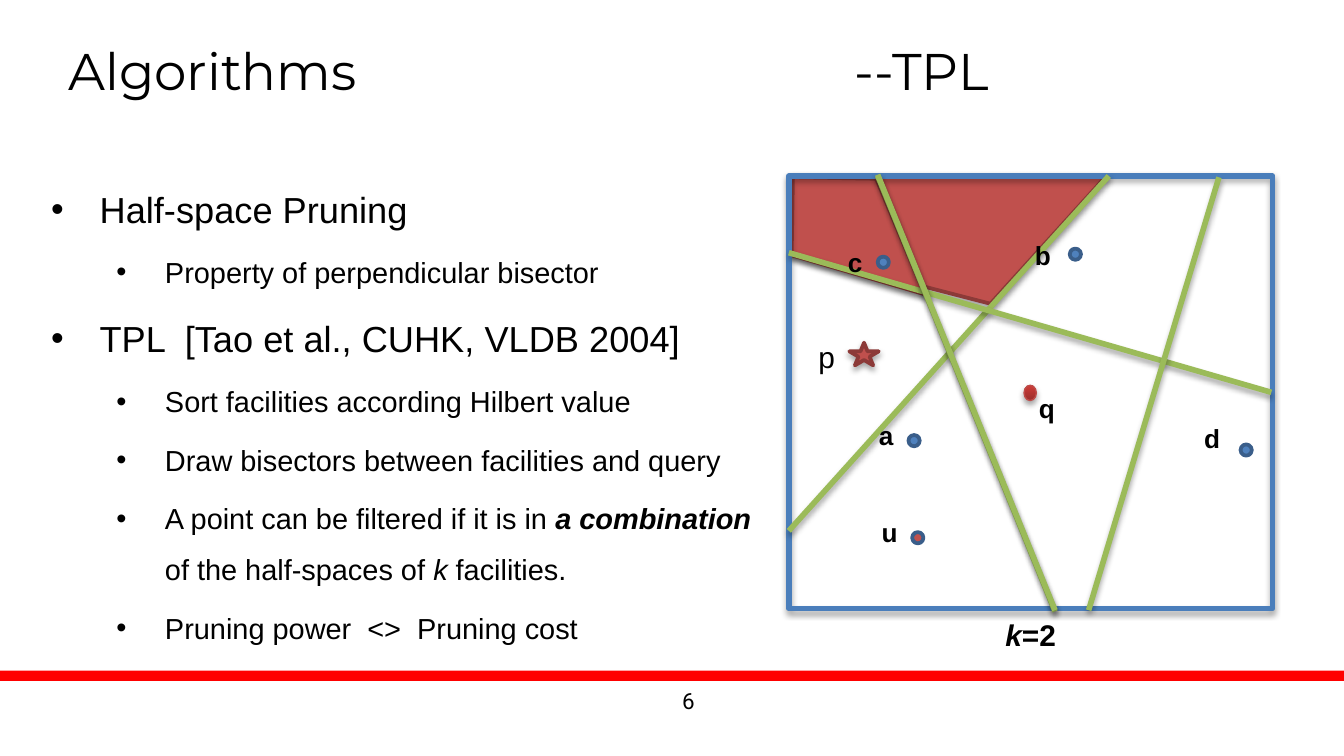
from typing import NamedTuple

from lxml.etree import SubElement
from pptx import Presentation
from pptx.dml.color import RGBColor
from pptx.enum.shapes import MSO_CONNECTOR, MSO_SHAPE
from pptx.enum.text import MSO_ANCHOR, PP_ALIGN
from pptx.oxml.ns import qn
from pptx.util import Pt

COLORS = {
    "text": "000000", "bar": "FF0000", "red": "C0504D", "dark_red": "8C3A38",
    "frame": "4A7EBB", "blue": "4F81BD", "dark_blue": "3A5E8A", "green": "9BBB59",
    "query_line": "BE4B48", "query_low": "9A2F2C", "query_high": "CE3B37",
}
DOT_SIZE = 6
LABEL_SIZE = (28, 24.5)


class Run(NamedTuple):
    text: str
    bold: bool = False
    italic: bool = False


class Item(NamedTuple):
    level: int
    runs: list[Run]


class Site(NamedTuple):
    name: str
    dot: tuple[float, float]
    label: tuple[float, float]
    fill: str = "blue"
    inset: float = 3.6


class Bisector(NamedTuple):
    start: tuple[float, float]
    end: tuple[float, float]


ITEMS = [
    Item(0, [Run("Half-space Pruning")]),
    Item(1, [Run("Property of perpendicular bisector")]),
    Item(0, [Run("TPL  [Tao et al., CUHK, VLDB 2004]")]),
    Item(1, [Run("Sort facilities according Hilbert value")]),
    Item(1, [Run("Draw bisectors between facilities and query")]),
    Item(1, [Run("A point can be filtered if it is in "),
             Run("a combination", bold=True, italic=True),
             Run(" of the half-spaces of "), Run("k", italic=True),
             Run(" facilities.")]),
    Item(1, [Run("Pruning power  <>  Pruning cost")]),
]
PRUNED_REGIONS = [
    [(423.4, 94.3), (592.6, 94.3), (530.6, 162.7), (424.8, 135.4)],
    [(424.8, 95), (469.4, 95.8), (495.4, 157.7), (424.1, 136.8)],
]
BISECTORS = [
    Bisector((422.6, 284.4), (594, 94.3)),
    Bisector((422.6, 135.4), (681.1, 210.2)),
    Bisector((565.2, 327.6), (470.2, 94.3)),
    Bisector((583.2, 326.9), (653, 95)),
    Bisector((565.2, 326.9), (470.2, 93.6)),
]
SITES = [
    Site("a", (486.7, 233.1), (467.3, 221)),
    Site("u", (488.7, 285.1), (468.7, 272.9), fill="red"),
    Site("d", (664.6, 238.1), (645.1, 226.1), inset=0),
    Site("c", (470.2, 137.5), (450.7, 128.2)),
    Site("b", (573.1, 133.2), (550.8, 124.6)),
]


def color(name: str) -> RGBColor:
    return RGBColor.from_string(COLORS[name])


def add_shadow(shape) -> None:
    """Give the shape a soft shadow straight below it."""
    effects = shape._element.spPr.find(qn("a:effectLst"))
    if effects is None:
        effects = SubElement(shape._element.spPr, qn("a:effectLst"))
    shadow = SubElement(effects, qn("a:outerShdw"), blurRad=str(Pt(3)),
                        dist=str(Pt(1.8)), dir="5400000", rotWithShape="0")
    black = SubElement(shadow, qn("a:srgbClr"), val="000000")
    SubElement(black, qn("a:alpha"), val="35000")


def style_shape(shape, *, fill: str | None = None, line: str | None = None,
                width: float = 2, shadow: bool = False) -> None:
    shape.shadow.inherit = False
    if fill:
        shape.fill.solid()
        shape.fill.fore_color.rgb = color(fill)
    else:
        shape.fill.background()
    if line:
        shape.line.color.rgb = color(line)
        shape.line.width = Pt(width)
    else:
        shape.line.fill.background()
    if shadow:
        add_shadow(shape)


def add_preset(slide, kind: MSO_SHAPE, box: tuple, **style):
    shape = slide.shapes.add_shape(kind, *map(Pt, box))
    style_shape(shape, **style)
    return shape


def add_region(slide, points: list[tuple[float, float]]) -> None:
    builder = slide.shapes.build_freeform(*map(Pt, points[0]))
    builder.add_line_segments([(Pt(x), Pt(y)) for x, y in points[1:]], close=True)
    style_shape(builder.convert_to_shape(), fill="red", line="dark_red", shadow=True)


def add_bisector(slide, bisector: Bisector) -> None:
    connector = slide.shapes.add_connector(
        MSO_CONNECTOR.STRAIGHT, *map(Pt, bisector.start + bisector.end))
    connector.line.color.rgb = color("green")
    connector.line.width = Pt(3)
    add_shadow(connector)


def write_runs(paragraph, runs: list[Run], size: float, font: str) -> None:
    for item in runs:
        run = paragraph.add_run()
        run.text = item.text
        run.font.size = Pt(size)
        run.font.name = font
        run.font.bold = item.bold
        run.font.italic = item.italic
        run.font.color.rgb = color("text")


def add_text(slide, box: tuple, runs: list[Run], *, size: float, font: str = "Arial",
             inset: float = 3.6, wrap: bool = True, align=PP_ALIGN.LEFT,
             anchor=MSO_ANCHOR.TOP):
    frame = slide.shapes.add_textbox(*map(Pt, box)).text_frame
    frame.word_wrap = wrap
    frame.vertical_anchor = anchor
    frame.margin_left = frame.margin_right = Pt(inset)
    frame.margin_top = frame.margin_bottom = Pt(inset)
    frame.paragraphs[0].alignment = align
    write_runs(frame.paragraphs[0], runs, size, font)
    return frame


def add_title(slide) -> None:
    frame = add_text(slide, (36.7, 20.9, 646.6, 46.8), [Run("Algorithms\t--TPL")],
                     size=27.6, font="Montserrat", inset=0)
    properties = frame.paragraphs[0]._p.get_or_add_pPr()
    tabs = SubElement(properties, qn("a:tabLst"))
    SubElement(tabs, qn("a:tab"), pos=str(Pt(421)), algn="l")


def add_bullets(slide) -> None:
    frame = add_text(slide, (27.4, 89.3, 384.5, 254.9), [], size=19.4, inset=0)
    for index, item in enumerate(ITEMS):
        paragraph = frame.add_paragraph() if index else frame.paragraphs[0]
        paragraph.level = item.level
        paragraph.line_spacing = 1.47
        if index:
            paragraph.space_before = Pt(4)
        properties = paragraph._p.get_or_add_pPr()
        properties.set("marL", str(Pt((26, 61)[item.level])))
        properties.set("indent", str(Pt(-26)))
        SubElement(properties, qn("a:buFont"), typeface="Arial")
        SubElement(properties, qn("a:buChar"), char="•")
        write_runs(paragraph, item.runs, (19.4, 15.5)[item.level], "Arial")


def add_label(slide, name: str, place: tuple[float, float], inset: float = 3.6) -> None:
    add_text(slide, place + LABEL_SIZE, [Run(name, bold=True)], size=14, inset=inset)


def add_query(slide) -> None:
    dot = add_preset(slide, MSO_SHAPE.OVAL, (548.6, 206.4, 6.6, 8.2), fill="red",
                     line="query_line", width=0.75, shadow=True)
    dot.fill.gradient()
    dot.fill.gradient_angle = 90
    for stop, name in zip(dot.fill.gradient_stops, ("query_low", "query_high")):
        stop.color.rgb = color(name)
    add_label(slide, "q", (553, 206.6))


def main() -> None:
    presentation = Presentation()
    presentation.slide_width, presentation.slide_height = Pt(720), Pt(405)
    slide = presentation.slides.add_slide(presentation.slide_layouts[6])

    add_preset(slide, MSO_SHAPE.RECTANGLE, (0, 359.3, 720, 5.5), fill="bar")
    for points in PRUNED_REGIONS:
        add_region(slide, points)
    add_bullets(slide)
    add_title(slide)
    add_text(slide, (343.4, 365, 32.4, 20.9), [Run("6")], size=12, font="Roboto",
             align=PP_ALIGN.RIGHT, anchor=MSO_ANCHOR.MIDDLE)
    add_text(slide, (535, 326.9, 46, 24.5),
             [Run("k", bold=True, italic=True), Run("=2", bold=True)], size=16)

    add_preset(slide, MSO_SHAPE.RECTANGLE, (422.6, 94.3, 259.2, 231.8),
               line="frame", width=3, shadow=True)
    for bisector in BISECTORS:
        add_bisector(slide, bisector)
    for site in SITES:
        add_preset(slide, MSO_SHAPE.OVAL, site.dot + (DOT_SIZE, DOT_SIZE),
                   fill=site.fill, line="dark_blue")
        add_label(slide, site.name, site.label, site.inset)
    add_query(slide)
    add_preset(slide, MSO_SHAPE.STAR_5_POINT, (455, 183.6, 15.8, 12.2),
               fill="red", line="dark_red", shadow=True)
    add_text(slide, (434.9, 177.8, 17.3, 24.5), [Run("p")], size=16, wrap=False)
    presentation.save("out.pptx")


if __name__ == "__main__":
    main()
